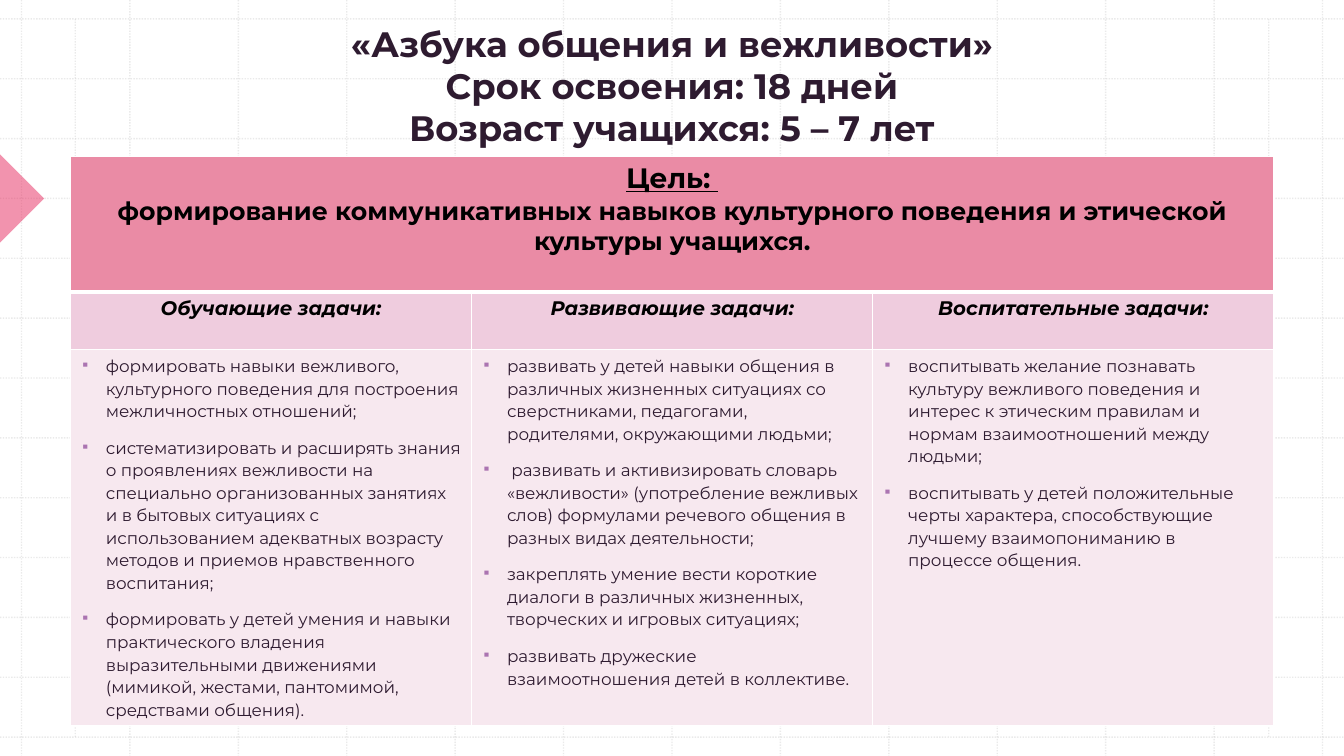
from dataclasses import dataclass
from typing import Any, NamedTuple

from lxml import etree
from pptx import Presentation
from pptx.dml.color import RGBColor
from pptx.enum.dml import MSO_LINE
from pptx.enum.shapes import MSO_CONNECTOR, MSO_SHAPE
from pptx.enum.text import MSO_ANCHOR, PP_ALIGN
from pptx.oxml.ns import qn
from pptx.util import Inches, Pt

LINE = MSO_CONNECTOR.STRAIGHT
DOTS = MSO_LINE.ROUND_DOT
WEDGE = MSO_SHAPE.RIGHT_TRIANGLE
TOP = MSO_ANCHOR.TOP
MID = PP_ALIGN.CENTER
LEFT = PP_ALIGN.LEFT
WIDE, TALL = Inches(13.33), Inches(7.5)


@dataclass(frozen=True)
class Theme:
    font: str = "Montserrat"
    ink: str = "2E1B30"
    black: str = "000000"
    white: str = "FFFFFF"
    grid: str = "BCBCBC"
    wedge: str = "E7295E"
    mark: str = "AB74B1"
    goal: str = "EA8BA5"
    head: str = "EFCCDE"
    body: str = "F7E8EF"
    title_pt: float = 25.2
    label_pt: float = 20
    goal_pt: float = 18
    head_pt: float = 14
    body_pt: float = 12


class Rule(NamedTuple):
    left: float
    top: float
    right: float
    foot: float


class Task(NamedTuple):
    head: str
    items: list[str]


THEME = Theme()
TITLE = ["«Азбука общения и вежливости»", "Срок освоения: 18 дней", "Возраст учащихся: 5 – 7 лет"]
LABEL = "Цель: "
GOAL = "формирование коммуникативных навыков культурного поведения и этической культуры учащихся."
TASKS = [
    Task("Обучающие задачи:", [
        "формировать навыки вежливого, культурного поведения для построения межличностных отношений;",
        "систематизировать и расширять знания о проявлениях вежливости на специально организованных "
        "занятиях и в бытовых ситуациях с использованием адекватных возрасту методов и приемов "
        "нравственного воспитания;",
        "формировать у детей умения и навыки практического владения выразительными движениями "
        "(мимикой, жестами, пантомимой, средствами общения).",
    ]),
    Task("Развивающие задачи:", [
        "развивать у детей навыки общения в различных жизненных ситуациях со сверстниками, "
        "педагогами, родителями, окружающими людьми;",
        " развивать и активизировать словарь «вежливости» (употребление вежливых слов) формулами "
        "речевого общения в разных видах деятельности;",
        "закреплять умение вести короткие диалоги в различных жизненных, творческих и игровых ситуациях;",
        "развивать дружеские взаимоотношения детей в коллективе.",
    ]),
    Task("Воспитательные задачи:", [
        "воспитывать желание познавать культуру вежливого поведения и интерес к этическим правилам "
        "и нормам взаимоотношений между людьми;",
        "воспитывать у детей положительные черты характера, способствующие лучшему взаимопониманию "
        "в процессе общения.",
    ]),
]

TITLE_FMT = {"size": Pt(THEME.title_pt), "bold": True}
LABEL_FMT = {"size": Pt(THEME.label_pt), "bold": True, "underline": True}
GOAL_FMT = {"size": Pt(THEME.goal_pt), "bold": True}
HEAD_FMT = {"size": Pt(THEME.head_pt), "bold": True, "italic": True}
BODY_FMT = {"size": Pt(THEME.body_pt), "bold": False}

STEPS = 12
EDGE_X, EDGE_Y = 1.6, 2.5
GAP_X = (100 - 2 * EDGE_X) / STEPS
GAP_Y = (100 - 2 * EDGE_Y) / STEPS
SIDE = 5.6
ROWS = [17.9, 7.6, 49.7]
COL = 29.85


def across(share: float) -> int:
    return round(WIDE * share / 100)


def down(share: float) -> int:
    return round(TALL * share / 100)


def tint(node: Any, tag: str, color: str, alpha: int = 100) -> None:
    fill = etree.SubElement(node, qn(tag))
    base = etree.SubElement(fill, qn("a:srgbClr"), val=color)
    if alpha < 100:
        etree.SubElement(base, qn("a:alpha"), val=str(alpha * 1000))


def fade(fill: Any, color: str, alpha: int) -> None:
    fill.solid()
    fill.fore_color.rgb = RGBColor.from_string(color)
    base = fill._xPr.find(".//" + qn("a:srgbClr"))
    etree.SubElement(base, qn("a:alpha"), val=str(alpha * 1000))


def draw_rule(slide: Any, rule: Rule) -> None:
    line = slide.shapes.add_connector(
        LINE, across(rule.left), down(rule.top), across(rule.right), down(rule.foot))
    fade(line.line.fill, THEME.grid, 30)
    for key, value in {"width": Pt(1), "dash_style": DOTS}.items():
        setattr(line.line, key, value)
    etree.SubElement(line._element.spPr, qn("a:effectLst"))


def draw_grid(slide: Any) -> None:
    cols = [EDGE_X + i * GAP_X for i in range(STEPS + 1)]
    rows = [EDGE_Y + i * GAP_Y for i in range(STEPS + 1)]
    rules = [Rule(x, 0, x, 100) for x in cols]
    rules += [Rule(0, y, 100, y) for y in rows]
    rules += [Rule(x, EDGE_Y, x, 100 - EDGE_Y) for x in (SIDE, 100 - SIDE)]
    for rule in rules:
        draw_rule(slide, rule)


def draw_wedge(slide: Any) -> None:
    size = across(4.65)
    wedge = slide.shapes.add_shape(WEDGE, -size // 2, down(22.13), size, size)
    wedge.rotation = 225
    wedge.shadow.inherit = False
    wedge.line.fill.background()
    fade(wedge.fill, THEME.wedge, 50)


def write(para: Any, text: str, style: dict[str, Any], color: str, align: Any = MID) -> None:
    para.alignment = align
    run = para.add_run()
    run.text = text
    for key, value in {"name": THEME.font, **style}.items():
        setattr(run.font, key, value)
    run.font.color.rgb = RGBColor.from_string(color)


def draw_title(slide: Any) -> None:
    box = slide.shapes.add_textbox(across(7.65), down(2.9), across(84.7), down(17))
    frame = box.text_frame
    style = {"word_wrap": True, "vertical_anchor": TOP, "margin_top": 0, "margin_bottom": 0}
    for key, value in style.items():
        setattr(frame, key, value)
    para = frame.paragraphs[0]
    for i, text in enumerate(TITLE):
        if i:
            para.add_line_break()
        write(para, text, TITLE_FMT, THEME.ink)


def add_mark(para: Any) -> None:
    for key, value in {"line_spacing": 1.1, "space_before": Pt(10)}.items():
        setattr(para, key, value)
    props = para._p.get_or_add_pPr()
    dent = Inches(0.25)
    props.set("marL", str(dent))
    props.set("indent", str(-dent))
    tint(props, "a:buClr", THEME.mark)
    etree.SubElement(props, qn("a:buSzPct"), val="75000")
    etree.SubElement(props, qn("a:buChar"), char="▪")


def dress(cell: Any, color: str, top: int, foot: int) -> None:
    cell.fill.solid()
    cell.fill.fore_color.rgb = RGBColor.from_string(color)
    props = cell._tc.get_or_add_tcPr()
    sides = {"a:lnL": 1, "a:lnR": 1, "a:lnT": top, "a:lnB": foot}
    for i, (tag, width) in enumerate(sides.items()):
        line = etree.Element(qn(tag), w=str(Pt(width)))
        tint(line, "a:solidFill", THEME.white)
        props.insert(i, line)


def draw_table(slide: Any) -> None:
    count = len(TASKS)
    shape = slide.shapes.add_table(
        len(ROWS), count, across(5.25), down(20.7), across(COL * count), down(sum(ROWS)))
    table = shape.table
    for key in ("first_row", "horz_banding"):
        setattr(table, key, False)
    for row, share in zip(table.rows, ROWS):
        row.height = down(share)
    for col in table.columns:
        col.width = across(COL)
    looks = [(THEME.goal, 1, 3), (THEME.head, 3, 1), (THEME.body, 1, 1)]
    for row, look in zip(table.rows, looks):
        for cell in row.cells:
            dress(cell, *look)

    goal = table.cell(0, 0)
    goal.merge(table.cell(0, count - 1))
    frame = goal.text_frame
    write(frame.paragraphs[0], LABEL, LABEL_FMT, THEME.black)
    write(frame.add_paragraph(), GOAL, GOAL_FMT, THEME.black)
    for i, task in enumerate(TASKS):
        write(table.cell(1, i).text_frame.paragraphs[0], task.head, HEAD_FMT, THEME.black)
        frame = table.cell(2, i).text_frame
        for j, text in enumerate(task.items):
            para = frame.add_paragraph() if j else frame.paragraphs[0]
            write(para, text, BODY_FMT, THEME.ink, LEFT)
            add_mark(para)


def main() -> None:
    deck = Presentation()
    deck.slide_width, deck.slide_height = WIDE, TALL
    slide = deck.slides.add_slide(deck.slide_layouts[6])
    for draw in (draw_grid, draw_wedge, draw_table, draw_title):
        draw(slide)
    deck.save("out.pptx")


if __name__ == "__main__":
    main()
